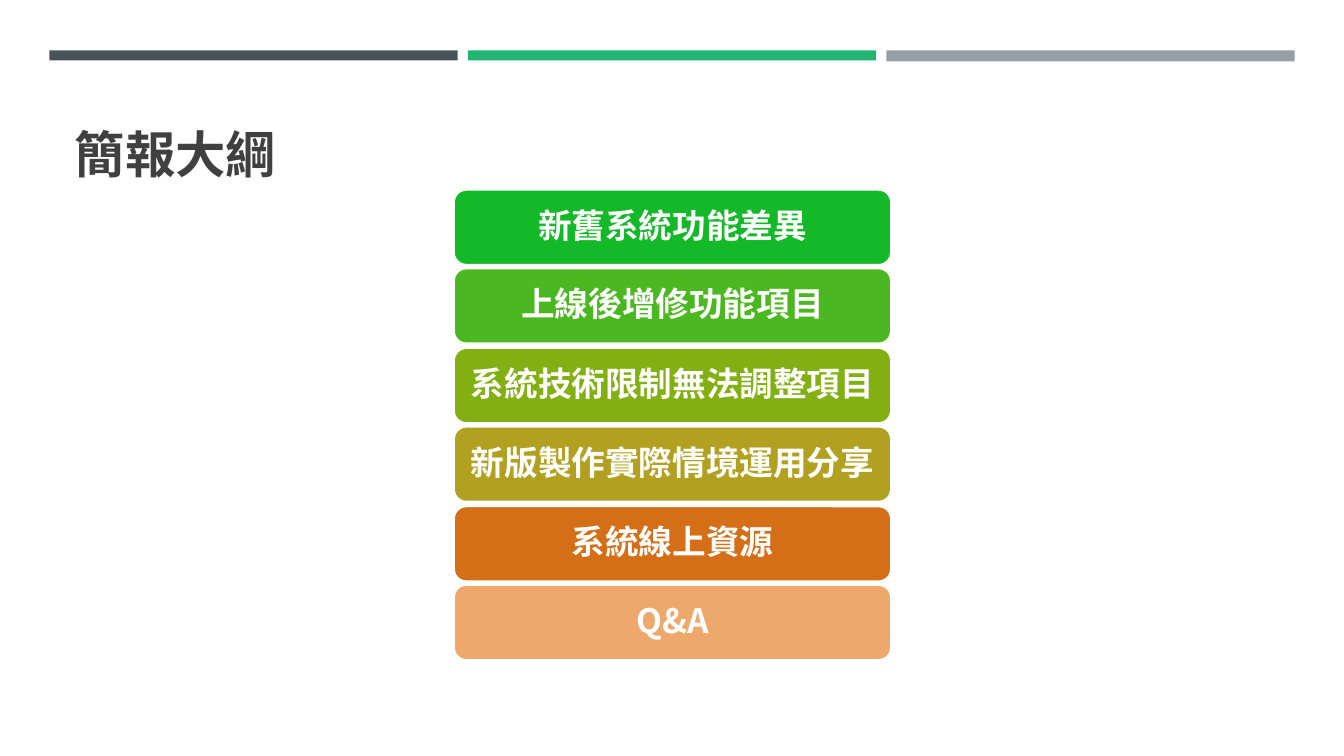
"""Build the outline slide: three accent bars, a title and a stack of topics."""
from dataclasses import dataclass

from lxml.etree import SubElement
from pptx import Presentation
from pptx.dml.color import RGBColor
from pptx.enum.shapes import MSO_SHAPE
from pptx.enum.text import MSO_ANCHOR, MSO_AUTO_SIZE, PP_ALIGN
from pptx.oxml.ns import qn
from pptx.shapes.autoshape import Shape
from pptx.slide import Slide
from pptx.text.text import TextFrame
from pptx.util import Emu, Pt

PX = 9144
CJK = "Noto Sans CJK SC"
LATIN = "Lato"

WHITE = RGBColor(0xFF, 0xFF, 0xFF)
CHARCOAL = RGBColor(0x40, 0x40, 0x40)
SLATE = RGBColor(0x46, 0x53, 0x59)
TEAL = RGBColor(0x20, 0xB5, 0x72)
GREY = RGBColor(0x96, 0x9F, 0xA7)
GREEN = RGBColor(0x14, 0xB9, 0x29)
GRASS = RGBColor(0x4C, 0xB8, 0x21)
OLIVE = RGBColor(0x82, 0xB0, 0x13)
MUSTARD = RGBColor(0xB2, 0xA1, 0x20)
ORANGE = RGBColor(0xD5, 0x6F, 0x17)
PEACH = RGBColor(0xEF, 0xA8, 0x6B)


@dataclass(frozen=True)
class Bar:
    color: RGBColor
    height: int


@dataclass(frozen=True)
class Topic:
    text: str
    color: RGBColor
    font: str = LATIN


BARS = [Bar(SLATE, 10), Bar(TEAL, 10), Bar(GREY, 11)]
BAR_LEFT, BAR_TOP, BAR_WIDTH, BAR_PITCH = 49, 50, 405, 415

TOPICS = [
    Topic("新舊系統功能差異", GREEN),
    Topic("上線後增修功能項目", GRASS),
    Topic("系統技術限制無法調整項目", OLIVE),
    Topic("新版製作實際情境運用分享", MUSTARD),
    Topic("系統線上資源", ORANGE),
    Topic("Q&A", PEACH, CJK),
]
TOPIC_LEFT, TOPIC_WIDTH, TOPIC_HEIGHT = 450, 434, 75
TOPIC_TOP, TOPIC_LAST_TOP = 188, 580


def px(n: int) -> Emu:
    return Emu(n * PX)


def write(tf: TextFrame, text: str, align: PP_ALIGN, anchor: MSO_ANCHOR,
          font: dict, color: RGBColor) -> None:
    frame = {"word_wrap": True, "auto_size": MSO_AUTO_SIZE.NONE,
             "vertical_anchor": anchor}
    for name, value in frame.items():
        setattr(tf, name, value)
    p = tf.paragraphs[0]
    p.alignment = align
    p.line_spacing = 0.9
    r = p.add_run()
    r.text = text
    for name, value in font.items():
        setattr(r.font, name, value)
    r.font.color.rgb = color
    SubElement(r.font._element, qn("a:ea"), typeface=CJK)


def add_block(s: Slide, kind: MSO_SHAPE, left: int, top: int, width: int,
              height: int, color: RGBColor) -> Shape:
    sp = s.shapes.add_shape(kind, px(left), px(top), px(width), px(height))
    sp.shadow.inherit = False
    sp.fill.solid()
    sp.fill.fore_color.rgb = color
    sp.line.fill.background()
    return sp


def add_bar(s: Slide, i: int, bar: Bar) -> None:
    add_block(s, MSO_SHAPE.RECTANGLE, BAR_LEFT + i * BAR_PITCH, BAR_TOP,
              BAR_WIDTH, bar.height, bar.color)


def add_topic(s: Slide, i: int, topic: Topic) -> None:
    pitch = (TOPIC_LAST_TOP - TOPIC_TOP) / (len(TOPICS) - 1)
    sp = add_block(s, MSO_SHAPE.ROUNDED_RECTANGLE, TOPIC_LEFT,
                   round(TOPIC_TOP + i * pitch), TOPIC_WIDTH, TOPIC_HEIGHT,
                   topic.color)
    sp.line.color.rgb = WHITE
    sp.line.width = Pt(1.75)
    tf = sp.text_frame
    tf.margin_left = tf.margin_right = px(4)
    write(tf, topic.text, PP_ALIGN.CENTER, MSO_ANCHOR.MIDDLE,
          {"name": topic.font, "size": Pt(24), "bold": True}, WHITE)


def add_title(s: Slide, text: str) -> None:
    sp = s.shapes.title
    place = {"left": 64, "top": 77, "width": 1206, "height": 111}
    for name, value in place.items():
        setattr(sp, name, px(value))
    write(sp.text_frame, text, PP_ALIGN.LEFT, MSO_ANCHOR.BOTTOM,
          {"name": CJK, "size": Pt(36), "bold": True}, CHARCOAL)


def main() -> None:
    prs = Presentation()
    prs.slide_width, prs.slide_height = px(1333), px(750)
    s = prs.slides.add_slide(prs.slide_layouts[5])
    for i, bar in enumerate(BARS):
        add_bar(s, i, bar)
    add_title(s, "簡報大綱")
    for i, topic in enumerate(TOPICS):
        add_topic(s, i, topic)
    prs.save("out.pptx")


if __name__ == "__main__":
    main()
